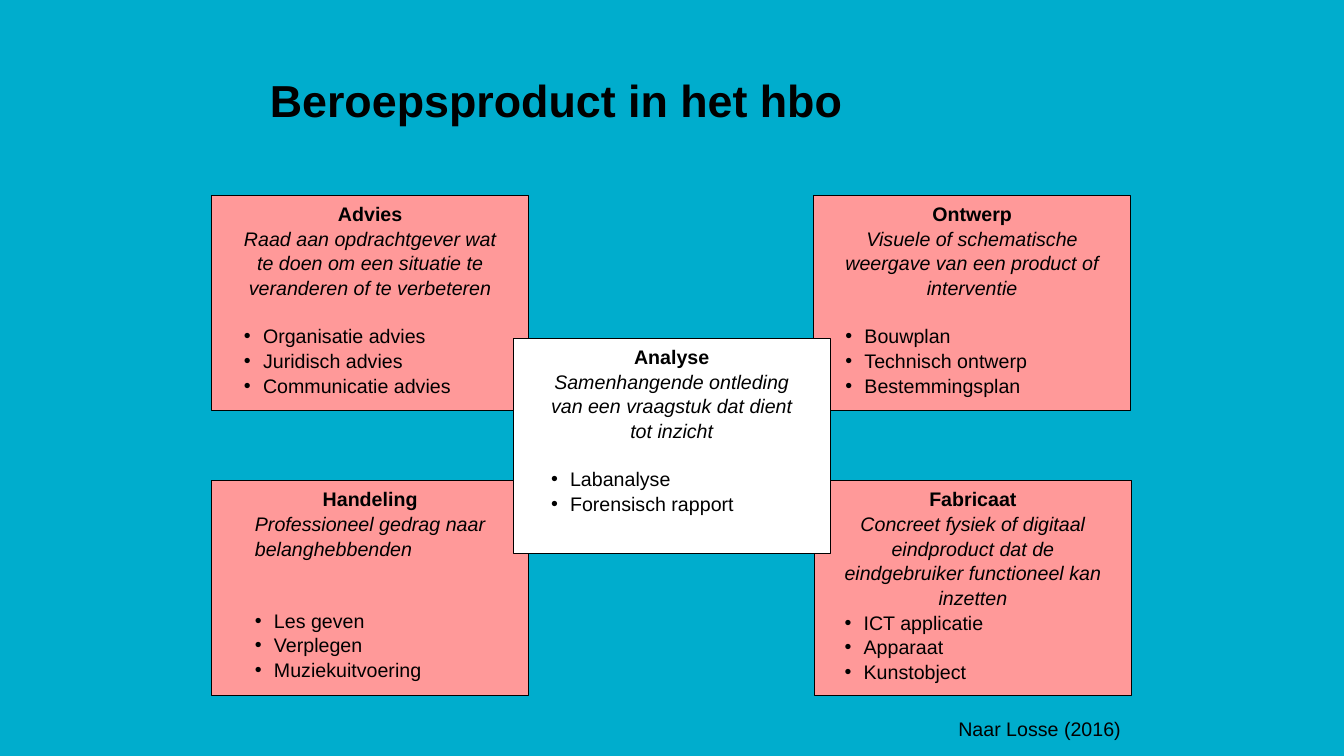
"""Build the slide on professional products in higher vocational education."""
from lxml import etree
from pptx import Presentation
from pptx import util as u
from pptx.dml.color import RGBColor
from pptx.enum import shapes, text
from pptx.oxml.ns import qn

BLACK, PINK, WHITE, TEAL = "000000", "FF9999", "FFFFFF", "00ADCD"
CARD_WIDTH, CARD_HEIGHT = 8.0, 5.41
HANG = u.Cm(0.48)
LINE = 16.9

CARDS = [
    (5.33, 4.93, PINK, "Advies",
     "Raad aan opdrachtgever wat te doen om een situatie te veranderen of te verbeteren",
     ["Organisatie advies", "Juridisch advies", "Communicatie advies"], {}),
    (20.5, 4.93, PINK, "Ontwerp",
     "Visuele of schematische weergave van een product of interventie",
     ["Bouwplan", "Technisch ontwerp", "Bestemmingsplan"], {}),
    (5.33, 12.12, PINK, "Handeling",
     "Professioneel gedrag naar belanghebbenden",
     ["Les geven", "Verplegen", "Muziekuitvoering"],
     {"gap": 2 * LINE, "align": text.PP_ALIGN.LEFT}),
    (20.52, 12.12, PINK, "Fabricaat",
     "Concreet fysiek of digitaal eindproduct dat de eindgebruiker functioneel kan inzetten",
     ["ICT applicatie", "Apparaat", "Kunstobject"], {"gap": 0}),
    (12.93, 8.53, WHITE, "Analyse",
     "Samenhangende ontleding van een vraagstuk dat dient tot inzicht",
     ["Labanalyse", "Forensisch rapport"], {}),
]


def paint(color_format, value):
    """Give a fill or font colour a hex value."""
    color_format.rgb = RGBColor.from_string(value)


def write(frame, words, size=14, bold=False, italic=False, bullet=False,
          align=text.PP_ALIGN.LEFT, before=0, spacing=1.0):
    """Add one formatted paragraph to a text frame."""
    paragraph = frame.paragraphs[0]
    if paragraph.runs:
        paragraph = frame.add_paragraph()
    paragraph.alignment = align
    paragraph.line_spacing = spacing
    if before:
        paragraph.space_before = u.Pt(before)
    if bullet:
        properties = paragraph._p.get_or_add_pPr()
        properties.set("marL", str(HANG))
        properties.set("indent", str(-HANG))
        etree.SubElement(properties, qn("a:buFont"), typeface="Arial")
        etree.SubElement(properties, qn("a:buChar"), char="•")
    run = paragraph.add_run()
    run.text = words
    run.font.name = "Arial"
    run.font.size = u.Pt(size)
    run.font.bold = bold
    run.font.italic = italic
    paint(run.font.color, BLACK)


def add_label(slide, left, top, width, height, words, wrap=True,
              anchor=text.MSO_ANCHOR.TOP, **style):
    """Add a text box with one line of text."""
    frame = slide.shapes.add_textbox(
        u.Cm(left), u.Cm(top), u.Cm(width), u.Cm(height)).text_frame
    frame.word_wrap = wrap
    frame.vertical_anchor = anchor
    write(frame, words, **style)


def add_card(slide, left, top, fill, heading, definition, examples,
             gap=LINE, align=text.PP_ALIGN.CENTER):
    """Add a card with a heading, a definition and bulleted examples."""
    card = slide.shapes.add_shape(
        shapes.MSO_SHAPE.RECTANGLE,
        u.Cm(left), u.Cm(top), u.Cm(CARD_WIDTH), u.Cm(CARD_HEIGHT))
    card.shadow.inherit = False
    card.fill.solid()
    paint(card.fill.fore_color, fill)
    paint(card.line.color, BLACK)
    card.line.width = u.Pt(0.75)
    frame = card.text_frame
    frame.word_wrap = True
    frame.vertical_anchor = text.MSO_ANCHOR.TOP
    frame._txBody.bodyPr.set("anchorCtr", "1")
    frame.margin_left = frame.margin_right = u.Cm(0.71)
    frame.margin_top = frame.margin_bottom = u.Cm(0.13)
    write(frame, heading, bold=True, align=text.PP_ALIGN.CENTER, spacing=1.05)
    write(frame, definition, italic=True, align=align, spacing=1.05)
    for index, example in enumerate(examples):
        write(frame, example, bullet=True, spacing=1.05,
              before=0 if index else gap)


def main():
    """Build and save the slide."""
    deck = Presentation()
    deck.slide_width, deck.slide_height = u.Cm(33.87), u.Cm(19.05)
    slide = deck.slides.add_slide(deck.slide_layouts[6])
    slide.background.fill.solid()
    paint(slide.background.fill.fore_color, TEAL)
    add_label(slide, 6.55, 1.68, 19.18, 1.63, "Beroepsproduct in het hbo",
              anchor=text.MSO_ANCHOR.BOTTOM, size=32, bold=True)
    for left, top, fill, heading, definition, examples, layout in CARDS:
        add_card(slide, left, top, fill, heading, definition, examples, **layout)
    add_label(slide, 23.9, 17.93, 4.62, 0.86, "Naar Losse (2016)", wrap=False)
    deck.save("out.pptx")


if __name__ == "__main__":
    main()
